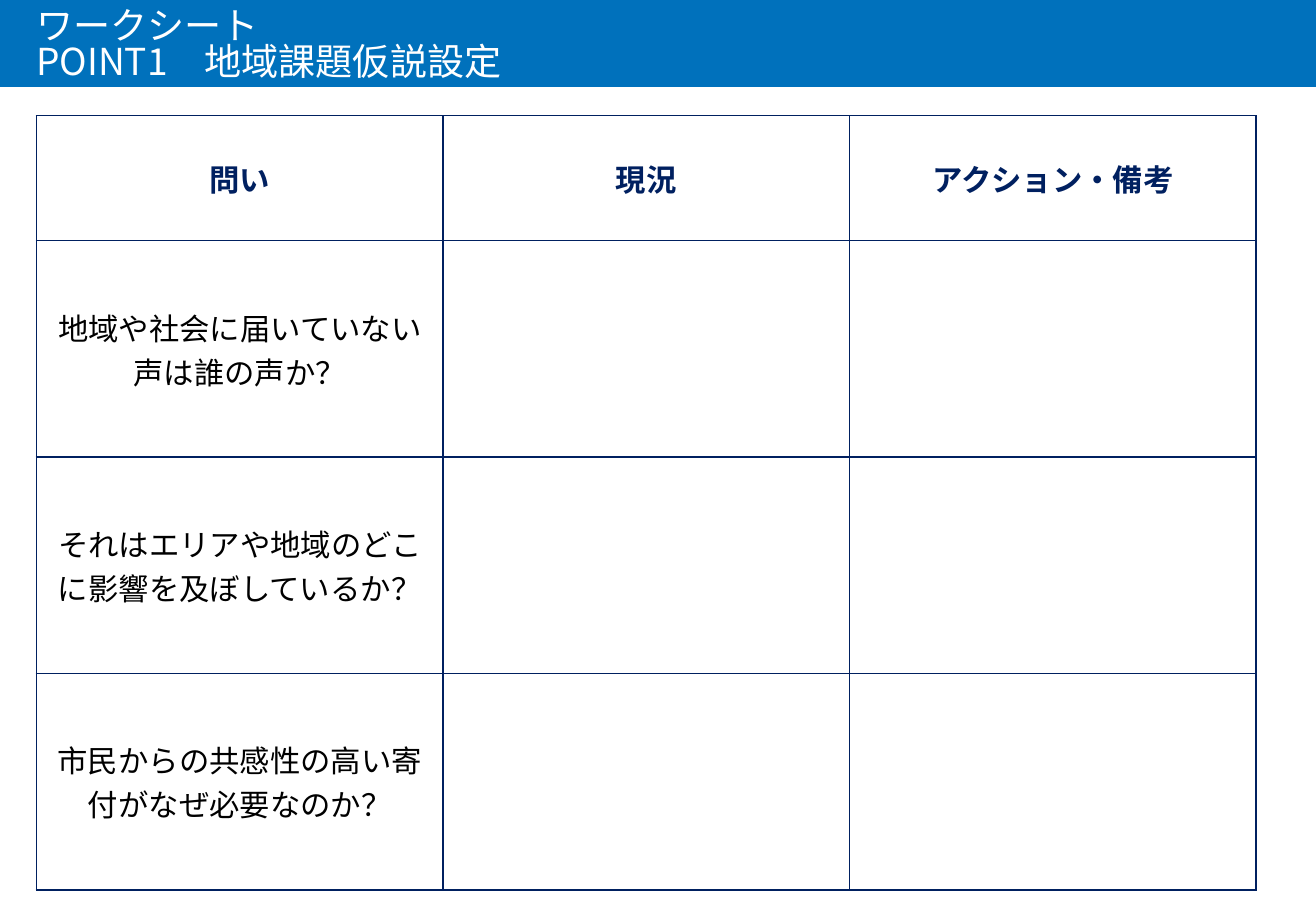
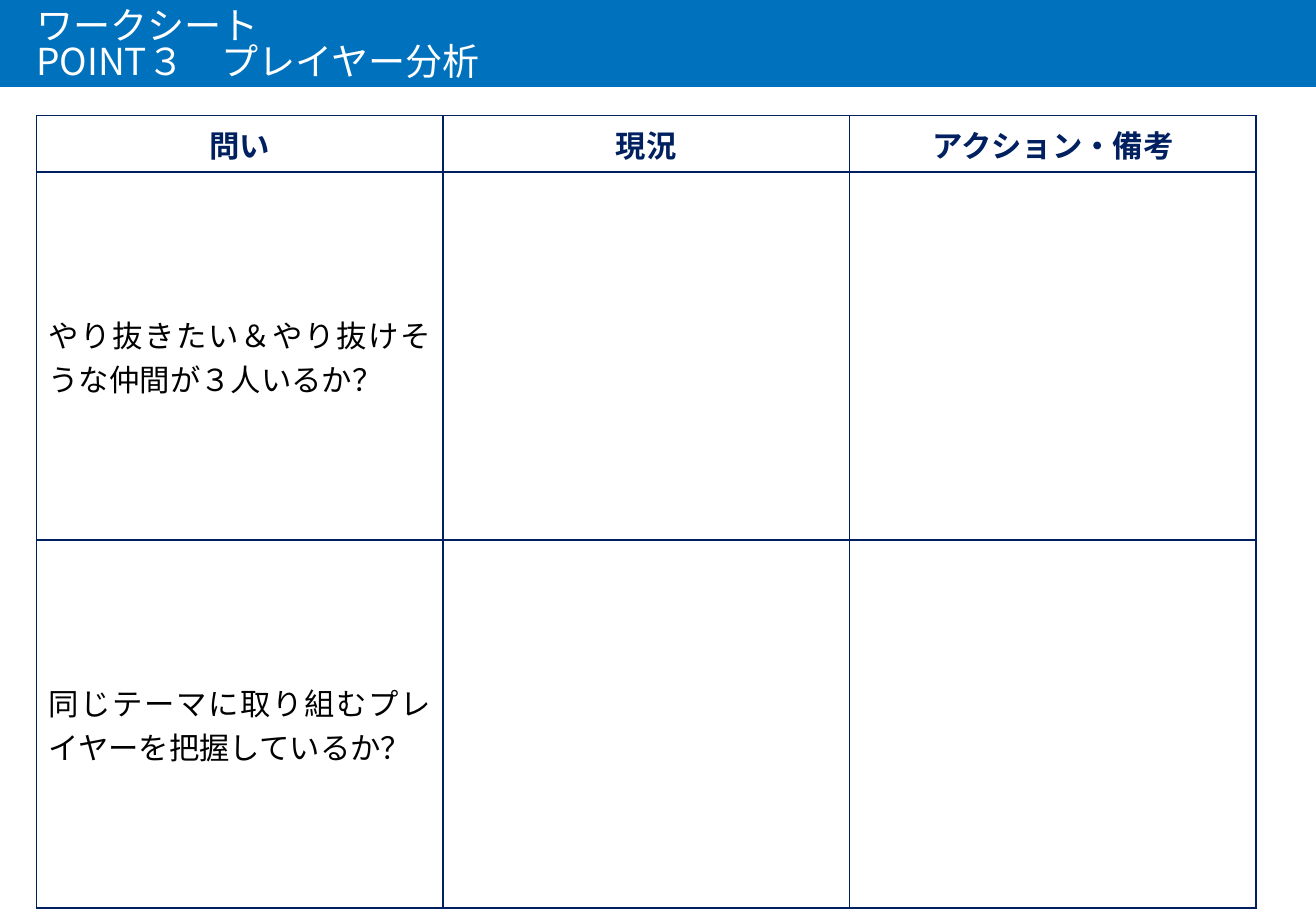
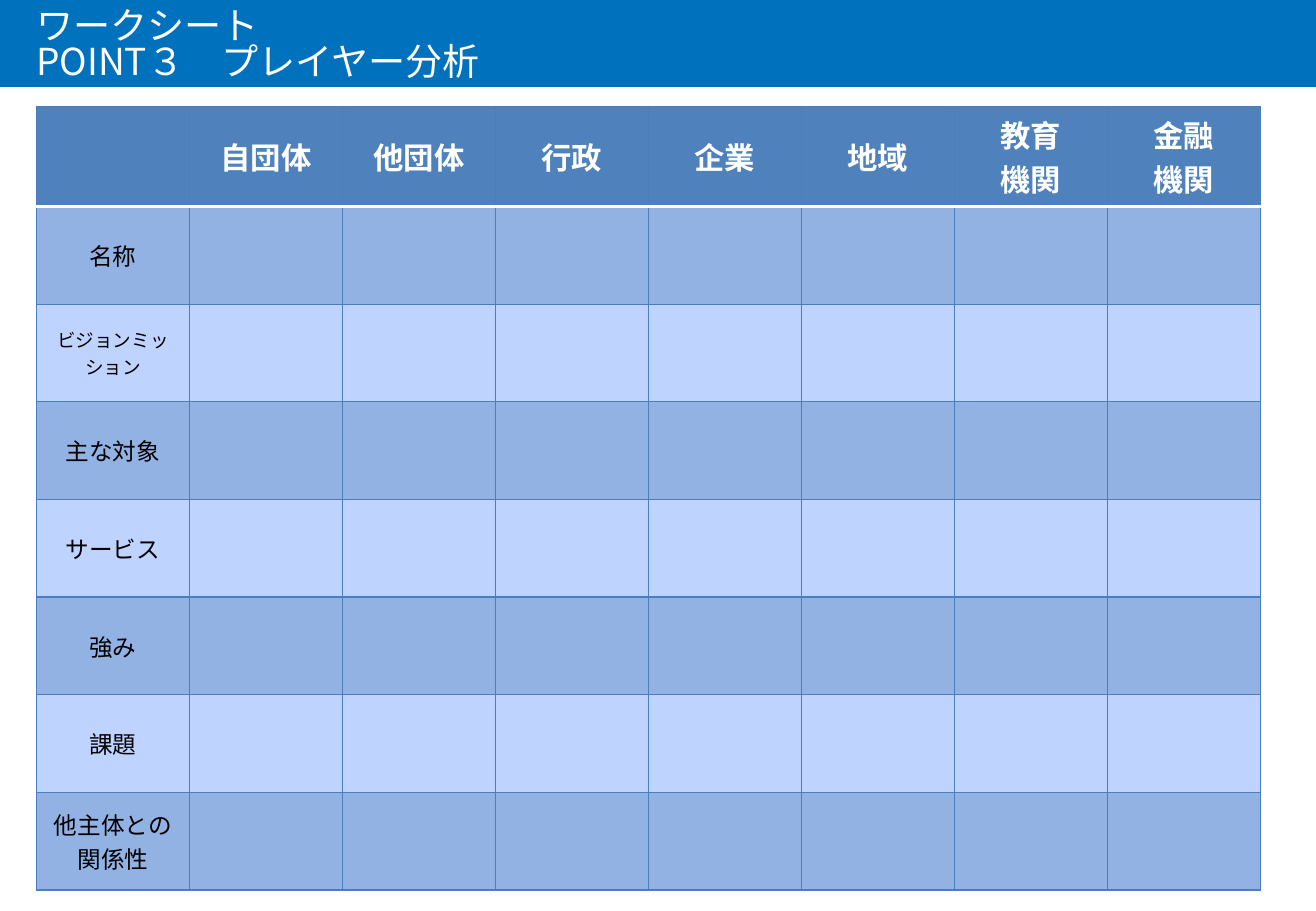
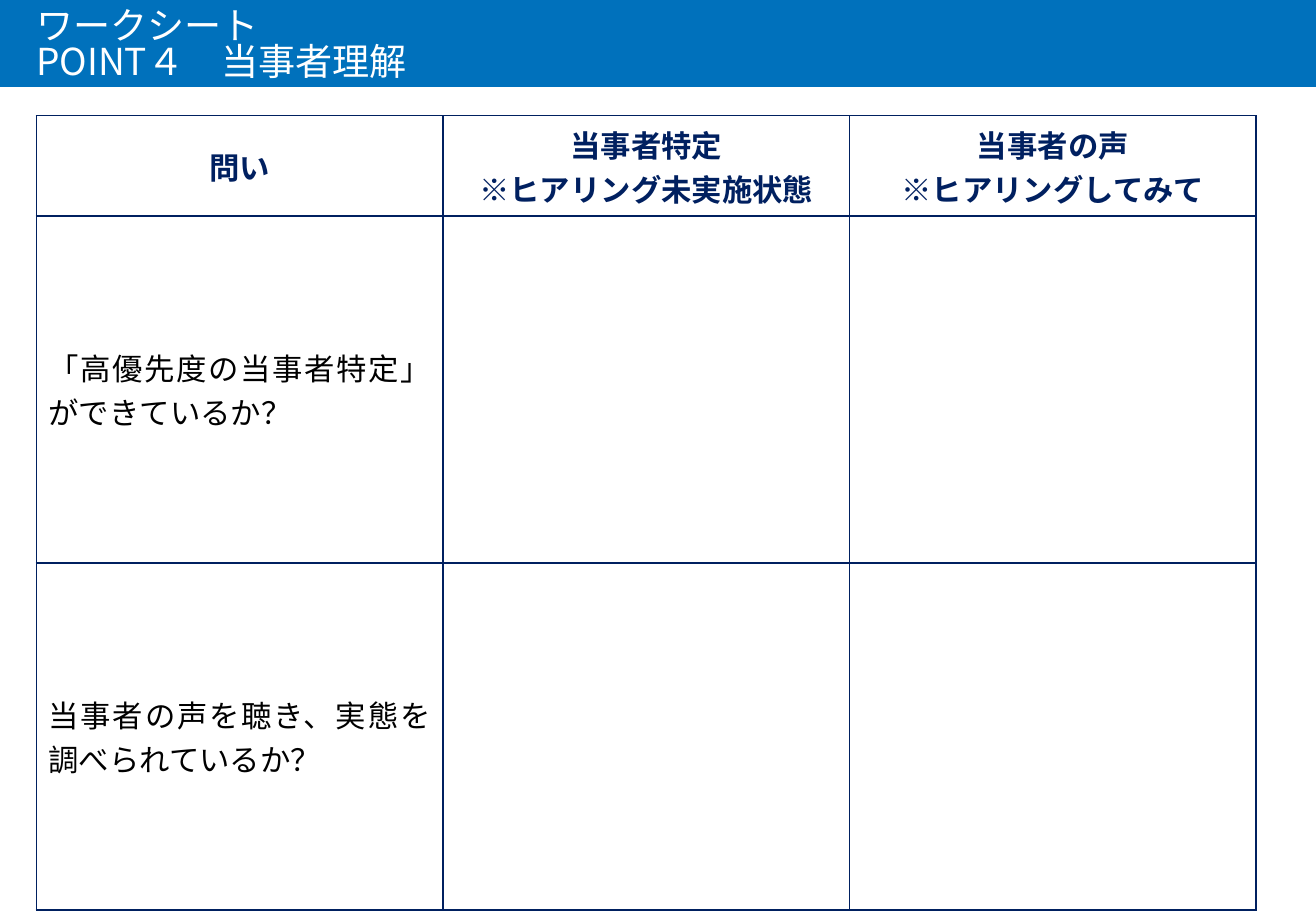
"""Build the four worksheet slides with a shared title band and ruled tables."""
import pptx
import pptx.dml.color
import pptx.enum.shapes
import pptx.enum.text
import pptx.oxml
import pptx.oxml.ns
import pptx.util

Pt = pptx.util.Pt
ALIGN = pptx.enum.text.PP_ALIGN
ANCHOR = pptx.enum.text.MSO_ANCHOR

WIDTH, HEIGHT, LEFT = 780, 540, 21.6
BLUE, NAVY, WHITE, BLACK = "0071BC", "002060", "FFFFFF", "000000"
HEAD, RULE, DARK, LIGHT = "4F81BD", "4B7EBC", "93B2E4", "BFD3FF"
FONT = "Noto Sans CJK JP"
SIDES = "LRTB"


def color(code):
    """Turn a hex string into a colour."""
    return pptx.dml.color.RGBColor.from_string(code)


def style(frame, size, tint, name=FONT, bold=False, align=ALIGN.LEFT):
    """Format every paragraph and run of a text frame."""
    for para in frame.paragraphs:
        para.alignment = align
        for run in para.runs:
            font = run.font
            font.name, font.size, font.bold = name, Pt(size), bold
            font.color.rgb = color(tint)
            east = pptx.oxml.parse_xml(
                f'<a:ea {pptx.oxml.ns.nsdecls("a")} typeface="{FONT}"/>')
            font._element.find(pptx.oxml.ns.qn("a:latin")).addnext(east)


def border(cell, lines):
    """Draw cell borders from a side-to-(colour, width) mapping."""
    props = cell._tc.get_or_add_tcPr()
    for side in SIDES:
        tint, width = lines[side]
        props.append(pptx.oxml.parse_xml(
            f'<a:ln{side} {pptx.oxml.ns.nsdecls("a")} w="{Pt(width)}">'
            f'<a:solidFill><a:srgbClr val="{tint}"/></a:solidFill></a:ln{side}>'))


def fill(cell, tint):
    """Fill a cell, or clear it when no colour is given."""
    if tint:
        cell.fill.solid()
        cell.fill.fore_color.rgb = color(tint)
    else:
        cell.fill.background()


def write(cell, text, **look):
    """Put centred-height text in a cell."""
    cell.vertical_anchor = ANCHOR.MIDDLE
    cell.text_frame.text = text
    style(cell.text_frame, **look)


def grid(slide, top, wide, cols, rows):
    """Add a table with equal columns and the given row heights."""
    frame = slide.shapes.add_table(
        len(rows), cols, Pt(LEFT), Pt(top), Pt(wide), Pt(sum(rows)))
    table = frame.table
    table.first_row = table.horz_banding = False
    for col in table.columns:
        col.width = Pt(wide / cols)
    for row, high in zip(table.rows, rows):
        row.height = Pt(high)
    return table


def sheet(slide, heads, asks, high, tall, align):
    """Add a question table with empty answer cells."""
    table = grid(slide, 68.6, 723, len(heads), [high] + [tall] * len(asks))
    for cell in table.iter_cells():
        border(cell, dict.fromkeys(SIDES, (NAVY, 1)))
        fill(cell, None)
    for col, text in enumerate(heads):
        write(table.cell(0, col), text, size=18, tint=NAVY, name="Calibri",
              bold=True, align=ALIGN.CENTER)
    for row, text in enumerate(asks, 1):
        write(table.cell(row, 0), text, size=18, tint=BLACK, name="Arial",
              align=align)


def matrix(slide, heads, labels):
    """Add the banded player table."""
    table = grid(slide, 63, 725.6, len(heads) + 1, [59.3] + [57.9] * len(labels))
    for row in range(len(labels) + 1):
        for col in range(len(heads) + 1):
            lines = dict.fromkeys(SIDES, (RULE, 0.75))
            if row < 2:
                lines["T" if row else "B"] = (WHITE, 2)
            cell = table.cell(row, col)
            border(cell, lines)
            fill(cell, HEAD if row == 0 else DARK if row % 2 else LIGHT)
    for col, text in enumerate(heads, 1):
        write(table.cell(0, col), text, size=18, tint=WHITE, name="Calibri",
              bold=True, align=ALIGN.CENTER)
    for row, (text, size) in enumerate(labels, 1):
        write(table.cell(row, 0), text, size=size, tint=BLACK, name="Calibri",
              align=ALIGN.CENTER)


def brand(slide):
    """Set the band and title place on the layout of a slide."""
    layout = slide.slide_layout
    band = slide.shapes.add_shape(
        pptx.enum.shapes.MSO_SHAPE.RECTANGLE, 0, 0, Pt(WIDTH), Pt(51.6))
    band.shadow.inherit = False
    band.fill.solid()
    band.fill.fore_color.rgb = color(BLUE)
    band.line.fill.background()
    layout.shapes.element.insert(2, band.element)
    title = layout.placeholders[0]
    title.left, title.top = Pt(LEFT), Pt(12.2)
    title.width, title.height = Pt(737.3), Pt(31)
    frame = title.text_frame
    frame.margin_left = frame.margin_right = 0
    frame.margin_top = frame.margin_bottom = 0
    frame.vertical_anchor = ANCHOR.MIDDLE
    frame.auto_size = pptx.enum.text.MSO_AUTO_SIZE.NONE


def page(deck, topic):
    """Add a slide with its two-line title."""
    slide = deck.slides.add_slide(deck.slide_layouts[5])
    if len(deck.slides) == 1:
        brand(slide)
    frame = slide.shapes.title.text_frame
    frame.text = f"ワークシート\v{topic}"
    frame.paragraphs[0].line_spacing = 0.82
    style(frame, 22, WHITE)
    return slide


def main():
    """Build and save the deck."""
    deck = pptx.Presentation()
    deck.slide_width, deck.slide_height = Pt(WIDTH), Pt(HEIGHT)
    heads = ["問い", "現況", "アクション・備考"]
    sheet(page(deck, "POINT1　地域課題仮説設定"), heads,
          ["地域や社会に届いていない声は誰の声か？",
           "それはエリアや地域のどこに影響を及ぼしているか？",
           "市民からの共感性の高い寄付がなぜ必要なのか？"],
          74, 128.3, ALIGN.CENTER)
    sheet(page(deck, "POINT３　プレイヤー分析"), heads,
          ["やり抜きたい＆やり抜けそうな仲間が３人いるか？",
           "同じテーマに取り組むプレイヤーを把握しているか？"],
          33.3, 218.2, ALIGN.JUSTIFY)
    matrix(page(deck, "POINT３　プレイヤー分析"),
           ["自団体", "他団体", "行政", "企業", "地域", "教育\n機関", "金融\n機関"],
           [("名称", 14), ("ビジョンミッション", 11), ("主な対象", 14),
            ("サービス", 14), ("強み", 14), ("課題", 14),
            ("他主体との関係性", 14)])
    sheet(page(deck, "POINT４　当事者理解"),
          ["問い", "当事者特定\n※ヒアリング未実施状態",
           "当事者の声\n※ヒアリングしてみて"],
          ["「高優先度の当事者特定」ができているか？",
           "当事者の声を聴き、実態を調べられているか？"],
          59.3, 205.8, ALIGN.JUSTIFY)
    deck.save("out.pptx")


if __name__ == "__main__":
    main()
